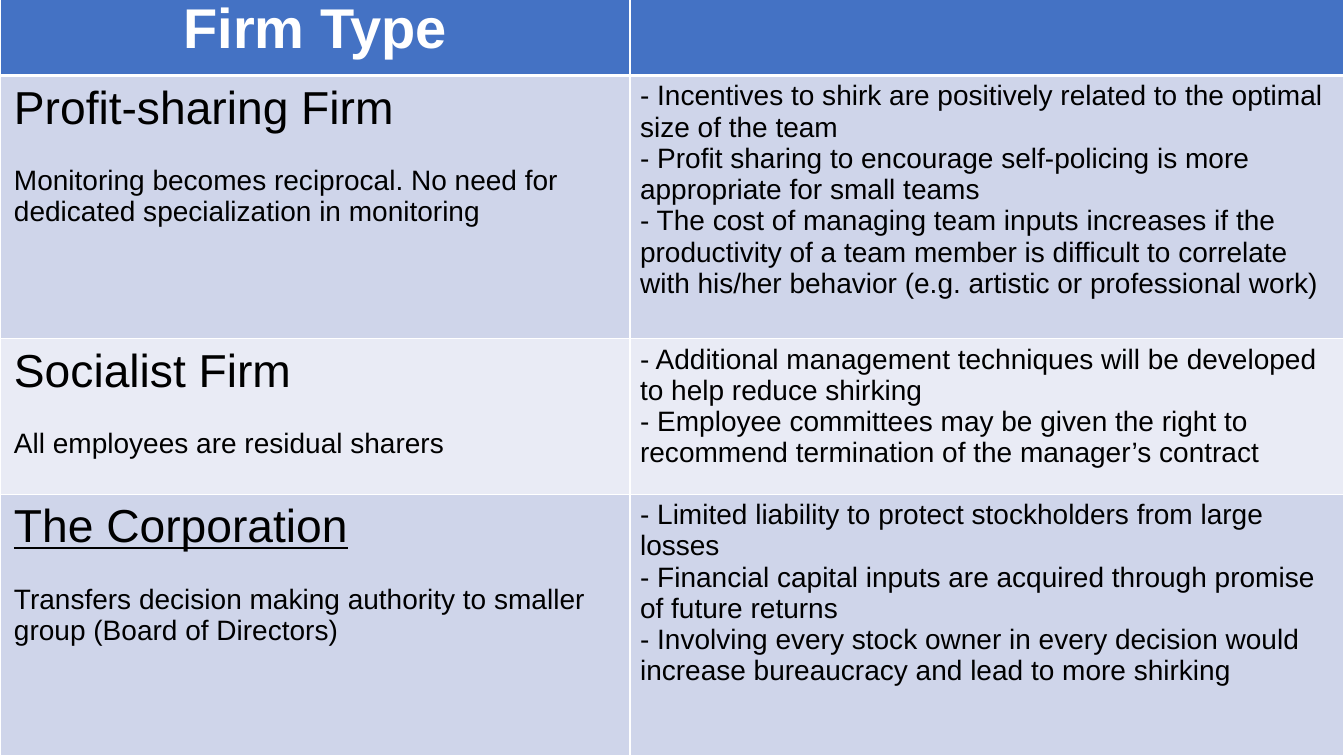
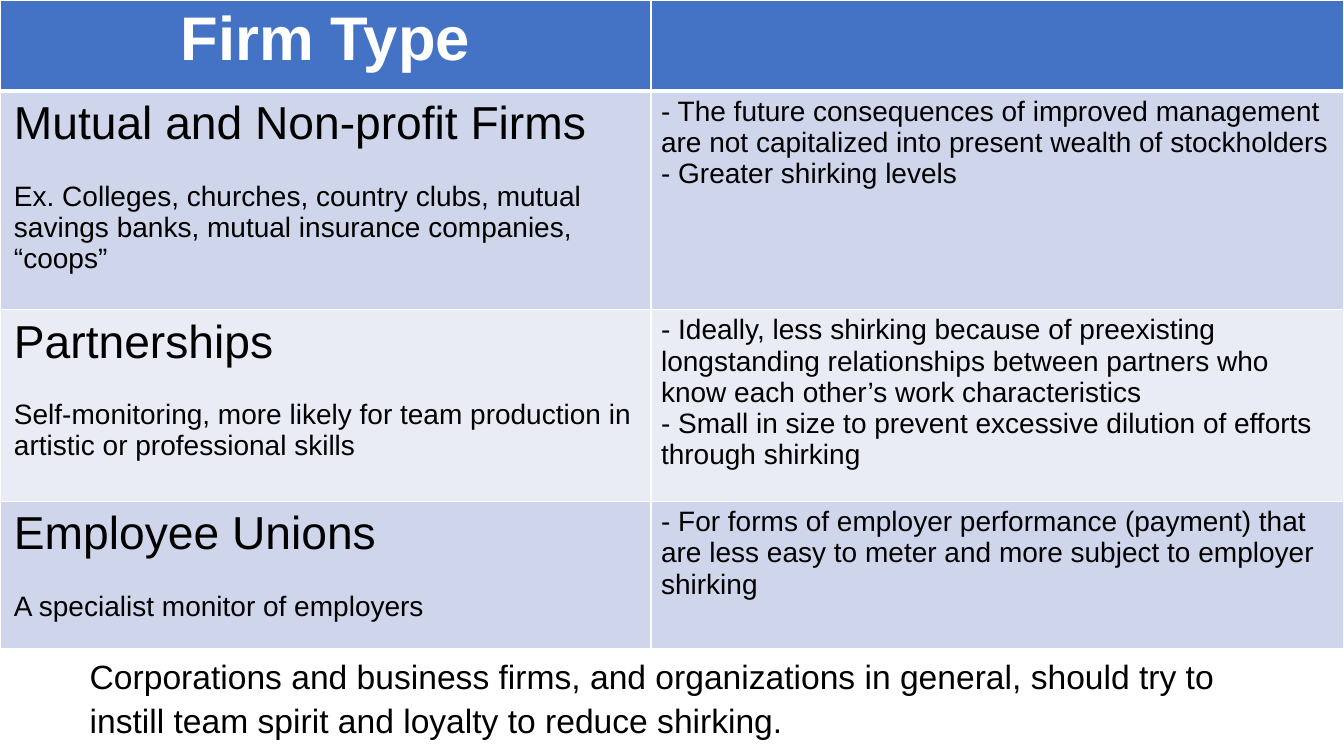
from lxml import etree
from pptx import Presentation
from pptx.dml.color import RGBColor
from pptx.enum import text
from pptx.oxml.ns import qn
from pptx.util import Pt

WHITE, BLACK, BLUE = "FFFFFF", "000000", "4472C4"
BANDS = ["CFD5EA", "E9EBF5"]
FONT = "Arial"
BODY = 20
GAP = 22.3  # one body line


def paint(color, code):
    color.rgb = RGBColor.from_string(code)


class Deck:
    def __init__(self):
        self.prs = Presentation()
        self.prs.slide_width, self.prs.slide_height = Pt(960), Pt(540)
        self.slide = None

    def page(self):
        self.slide = self.prs.slides.add_slide(self.prs.slide_layouts[6])

    def say(self, par, words, size, color=BLACK, bold=False, line=False):
        """Add one styled run to a paragraph."""
        run = par.add_run()
        run.text = words
        font = run.font
        font.name, font.size, font.bold = FONT, Pt(size), bold
        if line:
            font.underline = True
        paint(font.color, color)

    def edge(self, cell, top=1, base=1):
        """Draw white borders around a cell; widths in points."""
        props = cell._tc.get_or_add_tcPr()
        sides = [("lnL", 1), ("lnR", 1), ("lnT", top), ("lnB", base)]
        for spot, (tag, width) in enumerate(sides):
            ln = etree.Element(qn("a:" + tag), w=str(Pt(width)))
            fill = etree.SubElement(ln, qn("a:solidFill"))
            etree.SubElement(fill, qn("a:srgbClr"), val=WHITE)
            props.insert(spot, ln)

    def shade(self, cell, code):
        cell.fill.solid()
        paint(cell.fill.fore_color, code)

    def firm(self, cell, name, note, line=False):
        """Fill the left cell: a large name, then a note one line below."""
        cell.margin_left = cell.margin_right = Pt(10)
        cell.margin_top = cell.margin_bottom = Pt(5)
        frame = cell.text_frame
        self.say(frame.paragraphs[0], name, 33, line=line)
        par = frame.add_paragraph()
        par.space_before = Pt(GAP)
        self.say(par, note, BODY)

    def points(self, cell, items):
        frame = cell.text_frame
        for i, item in enumerate(items):
            par = frame.add_paragraph() if i else frame.paragraphs[0]
            self.say(par, "- " + item, BODY)

    def table(self, top, cols, rows, size, firms):
        grid = self.slide.shapes.add_table(
            len(rows), len(cols), Pt(0), Pt(top), Pt(sum(cols)), Pt(sum(rows))
        ).table
        grid.first_row = grid.horz_banding = False
        for col, width in zip(grid.columns, cols):
            col.width = Pt(width)
        for r, height in enumerate(rows):
            grid.rows[r].height = Pt(height)
            for cell in grid.rows[r].cells:
                self.shade(cell, BANDS[(r - 1) % 2] if r else BLUE)
                self.edge(cell, 3 if r == 1 else 1, 1 if r else 3)
        par = grid.cell(0, 0).text_frame.paragraphs[0]
        par.alignment = text.PP_ALIGN.CENTER
        self.say(par, "Firm Type", size, WHITE, bold=True)
        for r, (head, items) in enumerate(firms, 1):
            self.firm(grid.cell(r, 0), *head)
            self.points(grid.cell(r, 1), items)

    def label(self, left, top, width, height, words, size):
        frame = self.slide.shapes.add_textbox(
            Pt(left), Pt(top), Pt(width), Pt(height)).text_frame
        frame.word_wrap = True
        par = frame.paragraphs[0]
        par.line_spacing = 1.1
        self.say(par, words, size)


FIRST = [
    (("Profit-sharing Firm",
      "Monitoring becomes reciprocal. No need for dedicated "
      "specialization in monitoring"),
     ["Incentives to shirk are positively related to the optimal size "
      "of the team",
      "Profit sharing to encourage self-policing is more appropriate "
      "for small teams",
      "The cost of managing team inputs increases if the productivity of "
      "a team member is difficult to correlate with his/her behavior "
      "(e.g. artistic or professional work)"]),
    (("Socialist Firm", "All employees are residual sharers"),
     ["Additional management techniques will be developed to help "
      "reduce shirking",
      "Employee committees may be given the right to recommend "
      "termination of the manager’s contract"]),
    (("The Corporation",
      "Transfers decision making authority to smaller group "
      "(Board of Directors)", True),
     ["Limited liability to protect stockholders from large losses",
      "Financial capital inputs are acquired through promise of future "
      "returns",
      "Involving every stock owner in every decision would increase "
      "bureaucracy and lead to more shirking"]),
]

SECOND = [
    (("Mutual and Non-profit Firms",
      "Ex. Colleges, churches, country clubs, mutual savings banks, "
      "mutual insurance companies, “coops”"),
     ["The future consequences of improved management are not "
      "capitalized into present wealth of stockholders",
      "Greater shirking levels"]),
    (("Partnerships",
      "Self-monitoring, more likely for team production in artistic or "
      "professional skills"),
     ["Ideally, less shirking because of preexisting longstanding "
      "relationships between partners who know each other’s work "
      "characteristics",
      "Small in size to prevent excessive dilution of efforts through "
      "shirking"]),
    (("Employee Unions", "A specialist monitor of employers"),
     ["For forms of employer performance (payment) that are less easy to "
      "meter and more subject to employer shirking"]),
]


def main():
    deck = Deck()
    deck.page()
    deck.table(-5, [450, 510], [59, 188, 111, 187], 40, FIRST)
    deck.page()
    deck.table(0, [465, 495], [65, 156, 137, 105], 44, SECOND)
    deck.label(57, 462, 859, 66,
               "Corporations and business firms, and organizations in "
               "general, should try to instill team spirit and loyalty to "
               "reduce shirking.", 24)
    deck.prs.save("out.pptx")


if __name__ == "__main__":
    main()
